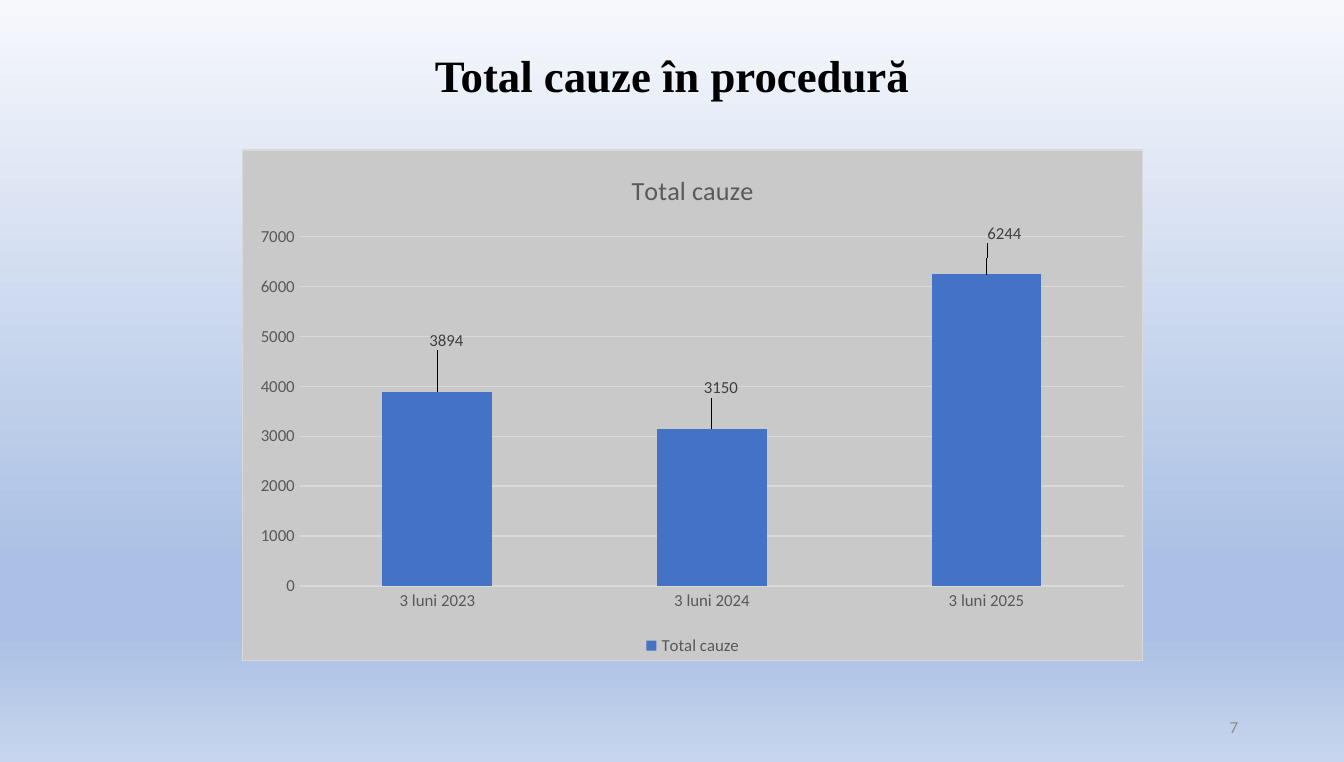
from lxml import etree
from pptx import Presentation
from pptx.chart.data import CategoryChartData
from pptx.dml.color import RGBColor
from pptx.enum.chart import XL_CHART_TYPE, XL_LABEL_POSITION, XL_LEGEND_POSITION, XL_TICK_MARK
from pptx.enum.text import MSO_ANCHOR, MSO_AUTO_SIZE, PP_ALIGN
from pptx.oxml import parse_xml
from pptx.oxml.ns import nsdecls, qn
from pptx.util import Cm, Pt

BLACK = RGBColor(0x00, 0x00, 0x00)
DARK_GRAY = RGBColor(0x40, 0x40, 0x40)
TEXT_GRAY = RGBColor(0x59, 0x59, 0x59)
NUMBER_GRAY = RGBColor(0x8C, 0x8C, 0x8C)
CHART_GRAY = RGBColor(0xC9, 0xC9, 0xC9)
LINE_GRAY = RGBColor(0xD9, 0xD9, 0xD9)
BAR_BLUE = RGBColor(0x44, 0x72, 0xC4)
SKY_PALE = RGBColor(0xF6, 0xF8, 0xFC)
SKY_BLUE = RGBColor(0xAB, 0xC0, 0xE4)
SKY_LIGHT = RGBColor(0xC7, 0xD5, 0xED)


def style_font(font, size, color, name="Calibri", bold=False):
    font.size = Pt(size)
    font.name = name
    font.bold = bold
    font.color.rgb = color


def make_layout(**settings):
    layout = etree.Element(qn("c:layout"))
    manual = etree.SubElement(layout, qn("c:manualLayout"))
    for tag, value in settings.items():
        etree.SubElement(manual, qn(f"c:{tag}")).set("val", str(value))
    return layout


presentation = Presentation()
presentation.slide_width = Cm(25.4)
presentation.slide_height = Cm(14.4)
slide = presentation.slides.add_slide(presentation.slide_layouts[5])

background = slide.background.fill
background.gradient()
background.gradient_angle = 270
stops = slide.element.xpath(".//a:gsLst")[0]
for stop in list(stops):
    stops.remove(stop)
for percent, color in [(0, SKY_PALE), (74, SKY_BLUE), (83, SKY_BLUE), (100, SKY_LIGHT)]:
    stop = etree.SubElement(stops, qn("a:gs"), pos=str(percent * 1000))
    etree.SubElement(stop, qn("a:srgbClr"), val=str(color))

title = slide.shapes.title
title.left, title.top, title.width, title.height = Cm(1.75), Cm(0.76), Cm(21.9), Cm(2.79)
frame = title.text_frame
frame.auto_size = MSO_AUTO_SIZE.NONE
frame.vertical_anchor = MSO_ANCHOR.TOP
frame.margin_top = Cm(0.25)
paragraph = frame.paragraphs[0]
paragraph.alignment = PP_ALIGN.CENTER
paragraph.line_spacing = 0.9
run = paragraph.add_run()
run.text = "Total cauze în procedură"
style_font(run.font, 24, BLACK, "Times New Roman", True)

chart_data = CategoryChartData()
chart_data.categories = ["3 luni 2023", "3 luni 2024", "3 luni 2025"]
chart_data.add_series("Total cauze", [3894, 3150, 6244])
chart = slide.shapes.add_chart(
    XL_CHART_TYPE.COLUMN_CLUSTERED, Cm(4.57), Cm(2.82), Cm(17.04), Cm(9.68), chart_data
).chart
style_font(chart.font, 10, BLACK)

chart.has_title = True
chart.chart_title.include_in_layout = False
run = chart.chart_title.text_frame.paragraphs[0].add_run()
run.text = "Total cauze"
style_font(run.font, 14, TEXT_GRAY)

chart.has_legend = True
chart.legend.position = XL_LEGEND_POSITION.BOTTOM
chart.legend.include_in_layout = False
style_font(chart.legend.font, 9, TEXT_GRAY)

for axis in (chart.category_axis, chart.value_axis):
    axis.major_tick_mark = XL_TICK_MARK.NONE
    axis.minor_tick_mark = XL_TICK_MARK.NONE
    axis.format.line.fill.background()
    style_font(axis.tick_labels.font, 9, TEXT_GRAY)
value_axis = chart.value_axis
value_axis.minimum_scale = 0
value_axis.maximum_scale = 7000
value_axis.major_unit = 1000
value_axis.has_major_gridlines = True
gridline = value_axis.major_gridlines.format.line
gridline.color.rgb = LINE_GRAY
gridline.width = Pt(0.75)

plot = chart.plots[0]
plot.gap_width = 150
plot.vary_by_categories = False
series = plot.series[0]
series.format.fill.solid()
series.format.fill.fore_color.rgb = BAR_BLUE
for index, (shift_x, shift_y) in enumerate([(0.01, -0.07), (0.01, -0.05), (0.02, -0.05)]):
    label = series.points[index].data_label
    style_font(label.font, 9, DARK_GRAY)
    label.position = XL_LABEL_POSITION.OUTSIDE_END
for label_index in series._element.xpath("c:dLbls/c:dLbl/c:idx"):
    shift_x, shift_y = [(0.01, -0.07), (0.01, -0.05), (0.02, -0.05)][int(label_index.get("val"))]
    label_index.addnext(make_layout(x=shift_x, y=shift_y))

chart_space = chart.element if hasattr(chart, "element") else chart._chartSpace
plot_area = chart_space.xpath("c:chart/c:plotArea")[0]
for layout in plot_area.xpath("c:layout"):
    plot_area.remove(layout)
plot_area.insert(0, make_layout(
    layoutTarget="inner", xMode="edge", yMode="edge", x=0.064, y=0.17, w=0.915, h=0.684
))
chart_space.xpath("c:chart")[0].addnext(parse_xml(
    f'<c:spPr {nsdecls("c", "a")}>'
    f'<a:solidFill><a:srgbClr val="{CHART_GRAY}"/></a:solidFill>'
    f'<a:ln w="{Pt(0.75)}"><a:solidFill><a:srgbClr val="{LINE_GRAY}"/></a:solidFill></a:ln>'
    "</c:spPr>"
))

number_box = slide.shapes.add_textbox(Cm(17.93), Cm(13.36), Cm(5.72), Cm(0.76))
frame = number_box.text_frame
frame.word_wrap = True
frame.vertical_anchor = MSO_ANCHOR.MIDDLE
paragraph = frame.paragraphs[0]
paragraph.alignment = PP_ALIGN.RIGHT
run = paragraph.add_run()
run.text = "7"
style_font(run.font, 9, NUMBER_GRAY)

presentation.save("out.pptx")
